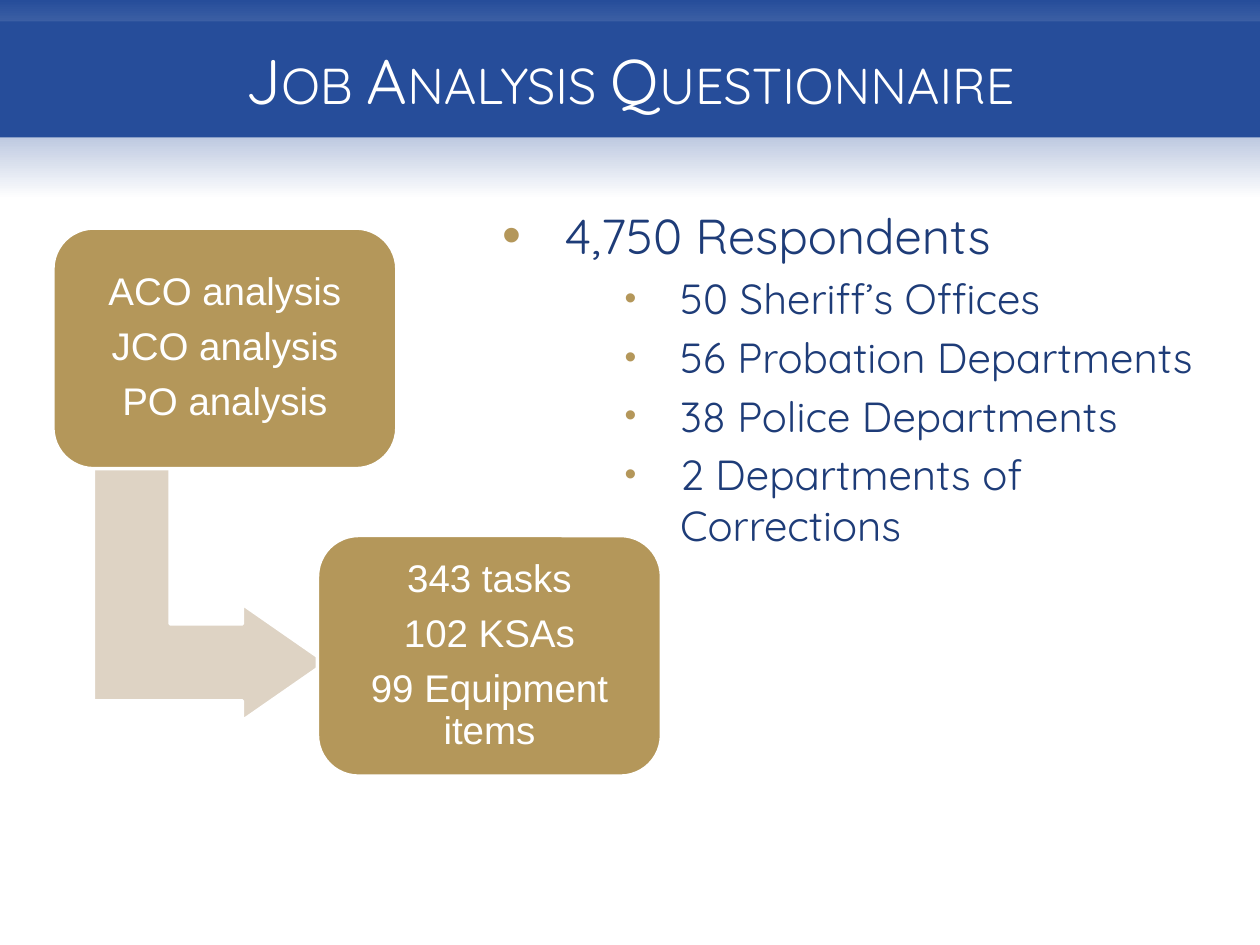
from lxml.etree import SubElement
from pptx import Presentation
from pptx.dml.color import RGBColor
from pptx.enum.shapes import MSO_SHAPE
from pptx.enum.text import MSO_ANCHOR, PP_ALIGN
from pptx.oxml.ns import qn
from pptx.util import Inches, Pt

RECT = MSO_SHAPE.RECTANGLE
ROUND = MSO_SHAPE.ROUNDED_RECTANGLE
BENT = MSO_SHAPE.BENT_UP_ARROW
MIDDLE = MSO_ANCHOR.MIDDLE
CENTER = PP_ALIGN.CENTER

COLORS = {"blue": "264D9A", "navy": "1E3C78", "gold": "B4975A",
          "sand": "DED3C4", "white": "FFFFFF"}

TITLE = "Job Analysis Questionnaire"
POINTS = [
    (0, "4,750 Respondents"),
    (1, "50 Sheriff’s Offices"),
    (1, "56 Probation Departments"),
    (1, "38 Police Departments"),
    (1, "2 Departments of\vCorrections"),
]
LEVELS = [
    {"size": 28, "left": 0.49, "hang": 0.49, "bullet": 110},
    {"size": 24, "left": 1.41, "hang": 0.44, "bullet": 80},
]
STEPS = [
    (0.42, 1.81, ["ACO analysis", "JCO analysis", "PO analysis"]),
    (2.52, 4.25, ["343 tasks", "102 KSAs", "99 Equipment items"]),
]


def color(name):
    return RGBColor.from_string(COLORS[name])


def style(font, face, size, name):
    font.name = face
    font.size = Pt(size)
    font.color.rgb = color(name)


def add_shape(slide, kind, box, fill, line=None):
    shape = slide.shapes.add_shape(kind, *map(Inches, box))
    shape.shadow.inherit = False
    shape.fill.solid()
    shape.fill.fore_color.rgb = color(fill)
    if line:
        shape.line.color.rgb = color(line)
        shape.line.width = Pt(2)
    else:
        shape.line.fill.background()
    return shape


def set_frame(frame, side, top):
    frame.word_wrap = True
    frame.vertical_anchor = MIDDLE
    frame.margin_left = frame.margin_right = Inches(side)
    frame.margin_top = frame.margin_bottom = Inches(top)


def add_bullet(para, level):
    props = para._p.get_or_add_pPr()
    props.set("marL", str(Inches(level["left"])))
    props.set("indent", str(-Inches(level["hang"])))
    tint = SubElement(props, qn("a:buClr"))
    SubElement(tint, qn("a:srgbClr"), val=COLORS["gold"])
    SubElement(props, qn("a:buSzPct"), val=str(level["bullet"] * 1000))
    SubElement(props, qn("a:buFont"), typeface="Arial")
    SubElement(props, qn("a:buChar"), char="•")


def add_points(slide):
    box = slide.shapes.add_textbox(*map(Inches, (3.89, 1.58, 6.08, 3.33)))
    frame = box.text_frame
    frame.word_wrap = True
    frame.text = "\n".join(text for _, text in POINTS)
    for row, (para, (depth, _)) in enumerate(zip(frame.paragraphs, POINTS)):
        level = LEVELS[depth]
        para.level = depth
        add_bullet(para, level)
        if row:
            para.space_before = Pt(level["size"] * 0.2)
        for run in para.runs:
            style(run.font, "Quicksand", level["size"], "navy")


def add_title(slide):
    bar = add_shape(slide, RECT, (0, 0.17, 10, 0.92), "blue")
    frame = bar.text_frame
    set_frame(frame, 0.1, 0)
    frame.text = TITLE
    para = frame.paragraphs[0]
    para.alignment = CENTER
    font = para.runs[0].font
    style(font, "Quicksand", 36, "white")
    font._element.set("cap", "small")


def add_steps(slide):
    arrow = add_shape(slide, BENT, (0.09, 3.22, 3.15, 1.85), "sand", "white")
    arrow.rotation = 90
    for spot, value in enumerate((0.33, 0.25, 0.36)):
        arrow.adjustments[spot] = value
    for left, top, lines in STEPS:
        card = add_shape(slide, ROUND, (left, top, 2.73, 1.91), "gold", "white")
        card.adjustments[0] = 0.17
        frame = card.text_frame
        set_frame(frame, 0.1, 0.1)
        frame.text = "\n".join(lines)
        for para in frame.paragraphs:
            para.alignment = CENTER
            para.line_spacing = 0.9
            para.space_after = Pt(7.7)
            style(para.runs[0].font, "Arial", 22, "white")


def main():
    deck = Presentation()
    deck.slide_width, deck.slide_height = Inches(10), Inches(7.5)
    slide = deck.slides.add_slide(deck.slide_layouts[6])
    fill = slide.background.fill
    fill.gradient()
    fill.gradient_angle = 270
    for stop, spot, name in zip(fill.gradient_stops, (0, 0.21), ("blue", "white")):
        stop.position = spot
        stop.color.rgb = color(name)
    add_points(slide)
    add_title(slide)
    add_steps(slide)
    deck.save("out.pptx")


if __name__ == "__main__":
    main()
